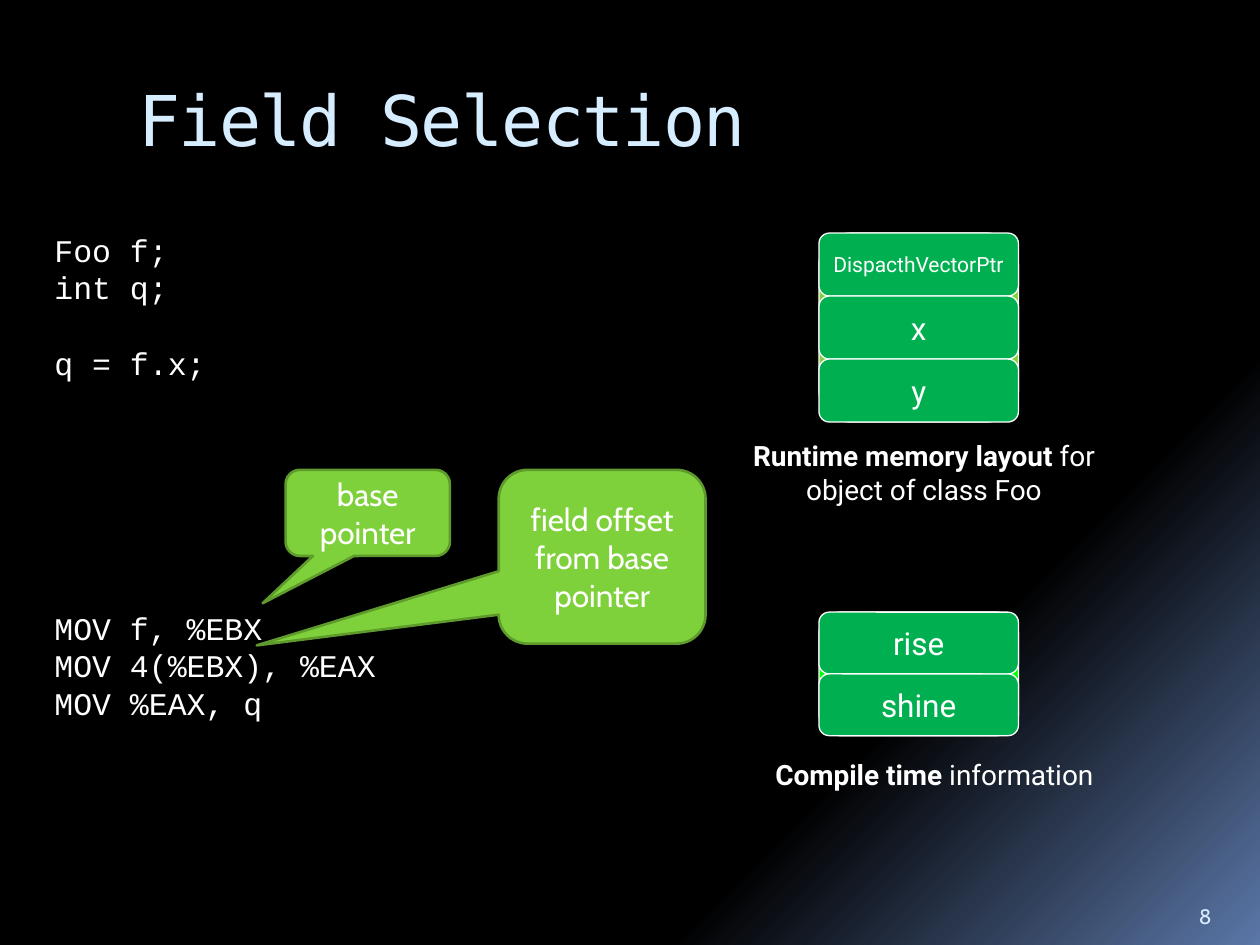
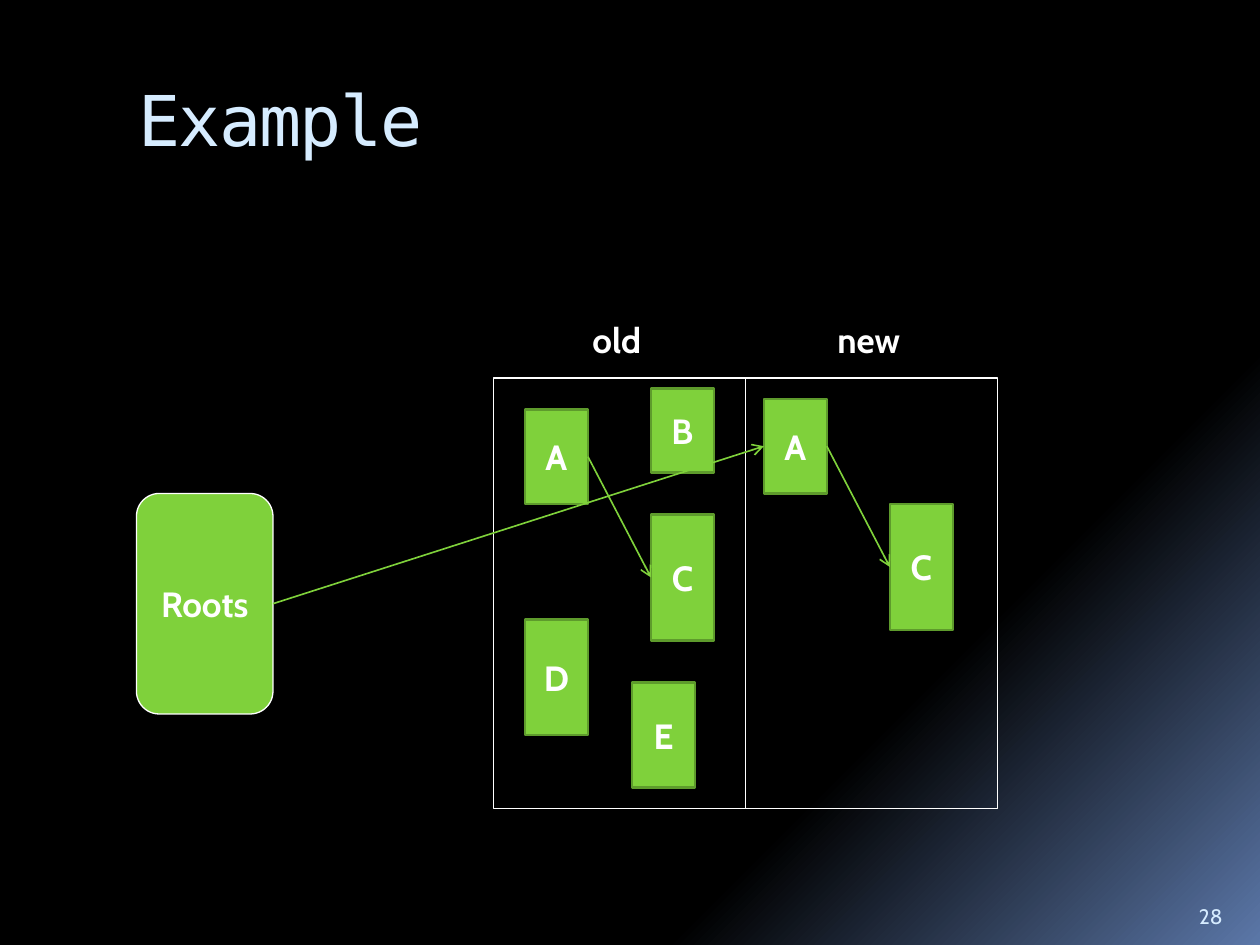
from dataclasses import dataclass

from lxml import etree
from pptx import Presentation
from pptx.dml.color import RGBColor
from pptx.enum.shapes import MSO_CONNECTOR, MSO_SHAPE
from pptx.enum.text import MSO_ANCHOR, PP_ALIGN
from pptx.oxml.ns import qn
from pptx.util import Inches, Pt

ROUNDED = MSO_SHAPE.ROUNDED_RECTANGLE
CALLOUT = MSO_SHAPE.ROUNDED_RECTANGULAR_CALLOUT
PROCESS = MSO_SHAPE.FLOWCHART_PROCESS
ALTERNATE = MSO_SHAPE.FLOWCHART_ALTERNATE_PROCESS
STRAIGHT = MSO_CONNECTOR.STRAIGHT
LEFT, CENTER = PP_ALIGN.LEFT, PP_ALIGN.CENTER
TOP, MIDDLE, BOTTOM = MSO_ANCHOR.TOP, MSO_ANCHOR.MIDDLE, MSO_ANCHOR.BOTTOM
LEFT_SITE, RIGHT_SITE = 1, 3

WIDTH, HEIGHT = Inches(10), Inches(7.5)
COLUMNS, ROWS = 120, 90


@dataclass(frozen=True)
class Theme:
    black: str = "000000"
    glow: str = "5B77A8"
    pale: str = "D6ECFF"
    white: str = "FFFFFF"
    lime: str = "7FD13B"
    moss: str = "5E9B2C"
    emerald: str = "00B050"
    neon: str = "00FF00"
    title_font: str = "DejaVu Sans Mono"
    body_font: str = "Cabin"
    label_font: str = "Roboto"
    code_font: str = "Courier New"
    title: float = 40
    heading: float = 20
    body: float = 18
    caption: float = 16
    small: float = 12
    code_line: float = 21.6
    thin: float = 0.75
    arrow: float = 0.94
    thick: float = 1.5


THEME = Theme()


def color(value):
    return RGBColor.from_string(value)


def place(left, top, width, height):
    """Turn grid columns and rows into slide lengths."""
    return (round(left * WIDTH / COLUMNS), round(top * HEIGHT / ROWS),
            round(width * WIDTH / COLUMNS), round(height * HEIGHT / ROWS))


def style(para, font, size, ink=THEME.white, bold=None, align=CENTER):
    para.alignment = align
    para.font.name = font
    para.font.size = Pt(size)
    para.font.color.rgb = color(ink)
    para.font.bold = bold


def add_text(page, area, words, font, size, ink=THEME.white, bold=None,
             align=LEFT, anchor=TOP):
    box = page.shapes.add_textbox(*place(*area))
    frame = box.text_frame
    frame.word_wrap = True
    frame.vertical_anchor = anchor
    frame.text = words
    style(frame.paragraphs[0], font, size, ink, bold, align)
    return frame


def add_block(page, kind, area, fill=None, line=THEME.white, weight=THEME.thin):
    block = page.shapes.add_shape(kind, *place(*area))
    block.shadow.inherit = False
    if fill:
        block.fill.solid()
        block.fill.fore_color.rgb = color(fill)
    else:
        block.fill.background()
    block.line.color.rgb = color(line)
    block.line.width = Pt(weight)
    return block


def label(block, words, font, size, bold=None, wrap=False):
    frame = block.text_frame
    frame.word_wrap = wrap
    frame.vertical_anchor = MIDDLE
    frame.text = words
    style(frame.paragraphs[0], font, size, bold=bold)


def add_page(deck, title, number):
    page = deck.slides.add_slide(deck.slide_layouts[6])
    fill = page.background.fill
    fill.gradient()
    fill.gradient_angle = 315
    stops = ((0.73, THEME.black), (1, THEME.glow))
    for stop, (position, tint) in zip(fill.gradient_stops, stops):
        stop.position = position
        stop.color.rgb = color(tint)
    heading = add_text(page, (12, 6.7, 102, 12), title, THEME.title_font,
                       THEME.title, THEME.pale)
    span = heading.paragraphs[0].runs[0]
    span.font._element.set("spc", "-100")
    add_text(page, (113, 84.2, 6, 4.8), str(number), THEME.body_font,
             THEME.small, THEME.pale, anchor=BOTTOM)
    return page


def add_code(page, top, width, groups):
    """Write groups of code lines, one empty line apart."""
    height = 4 * sum(len(group) for group in groups)
    frame = page.shapes.add_textbox(*place(4, top, width, height)).text_frame
    frame.word_wrap = False
    frame.margin_top = Inches(0.08)
    frame.text = "\n".join(line for group in groups for line in group)
    for para in frame.paragraphs:
        style(para, THEME.code_font, THEME.body, align=LEFT)
        para.line_spacing = Pt(THEME.code_line)
    start = 0
    for group in groups[:-1]:
        start += len(group)
        frame.paragraphs[start].space_before = Pt(THEME.code_line)


def add_stack(page, top, row_height, backing, cells):
    """Stack rounded cells, given as (words, size), on a backing block."""
    left, width = 78, 19
    add_block(page, ROUNDED, (left, top, width, row_height * len(cells)), backing)
    for row, (words, size) in enumerate(cells):
        area = (left, top + row * row_height, width, row_height)
        cell = add_block(page, ROUNDED, area, THEME.emerald)
        label(cell, words, THEME.label_font, size)


def add_caption(page, area, strong, rest):
    frame = add_text(page, area, strong, THEME.label_font, THEME.caption,
                     align=CENTER)
    para = frame.paragraphs[0]
    para.runs[0].font.bold = True
    para.add_run().text = rest


def add_callout(page, area, tip, words):
    callout = add_block(page, CALLOUT, area, THEME.lime, THEME.moss, THEME.thick)
    callout.adjustments[0], callout.adjustments[1] = tip
    label(callout, words, THEME.body_font, THEME.body, wrap=True)


def add_node(page, name, area):
    node = add_block(page, PROCESS, area, THEME.lime, THEME.moss, THEME.thick)
    label(node, name, THEME.body_font, THEME.heading, bold=True)
    return node


def add_arrow(page, source, target):
    arrow = page.shapes.add_connector(STRAIGHT, 0, 0, 0, 0)
    arrow.begin_connect(source, RIGHT_SITE)
    arrow.end_connect(target, LEFT_SITE)
    arrow.line.color.rgb = color(THEME.lime)
    arrow.line.width = Pt(THEME.arrow)
    outline = arrow.line._get_or_add_ln()
    etree.SubElement(outline, qn("a:tailEnd"), type="arrow")
    etree.SubElement(arrow._element.spPr, qn("a:effectLst"))


def build_field_selection(deck):
    page = add_page(deck, "Field Selection", 8)
    add_stack(page, 22.2, 6, THEME.lime, [
        ("DispacthVectorPtr", THEME.small), ("x", THEME.body), ("y", THEME.body)])
    add_caption(page, (67, 41.2, 42, 7.7), "Runtime memory layout",
                " for object of class Foo")
    add_stack(page, 58.3, 5.88, THEME.neon, [
        ("rise", THEME.body), ("shine", THEME.body)])
    add_caption(page, (68, 71.6, 42, 4.4), "Compile time", " information")
    add_code(page, 21, 21.6, [["Foo f;", "int q;"], ["q = f.x;"]])
    add_code(page, 57, 43.2, [["MOV f, %EBX", "MOV 4(%EBX), %EAX", "MOV %EAX, q"]])
    add_callout(page, (27.2, 44.75, 15.65, 8.2), (-0.64, 1.05), "base pointer")
    add_callout(page, (47.5, 44.75, 19.7, 16.55), (-1.67, 0.51),
                "field offset from base pointer")


def build_example(deck):
    page = add_page(deck, "Example", 28)
    space_width = 24
    for index, name in enumerate(("old", "new")):
        left = 47 + index * space_width
        add_block(page, PROCESS, (left, 36, space_width, 41))
        add_text(page, (left, 29.7, space_width - 0.5, 5.3), name,
                 THEME.body_font, THEME.heading, bold=True, align=CENTER)

    roots = add_block(page, ALTERNATE, (13, 47, 13, 21), THEME.lime)
    label(roots, "Roots", THEME.body_font, THEME.heading, bold=True)
    old_a = add_node(page, "A", (50, 39, 6, 9))
    add_node(page, "D", (50, 59, 6, 11))
    old_c = add_node(page, "C", (62, 49, 6, 12))
    add_node(page, "B", (62, 37, 6, 8))
    add_node(page, "E", (60.2, 65, 6, 10))
    new_a = add_node(page, "A", (72.75, 38, 6, 9))
    new_c = add_node(page, "C", (84.75, 48, 6, 12))
    for source, target in ((roots, new_a), (old_a, old_c), (new_a, new_c)):
        add_arrow(page, source, target)


def main():
    deck = Presentation()
    deck.slide_width, deck.slide_height = WIDTH, HEIGHT
    build_field_selection(deck)
    build_example(deck)
    deck.save("out.pptx")


if __name__ == "__main__":
    main()
